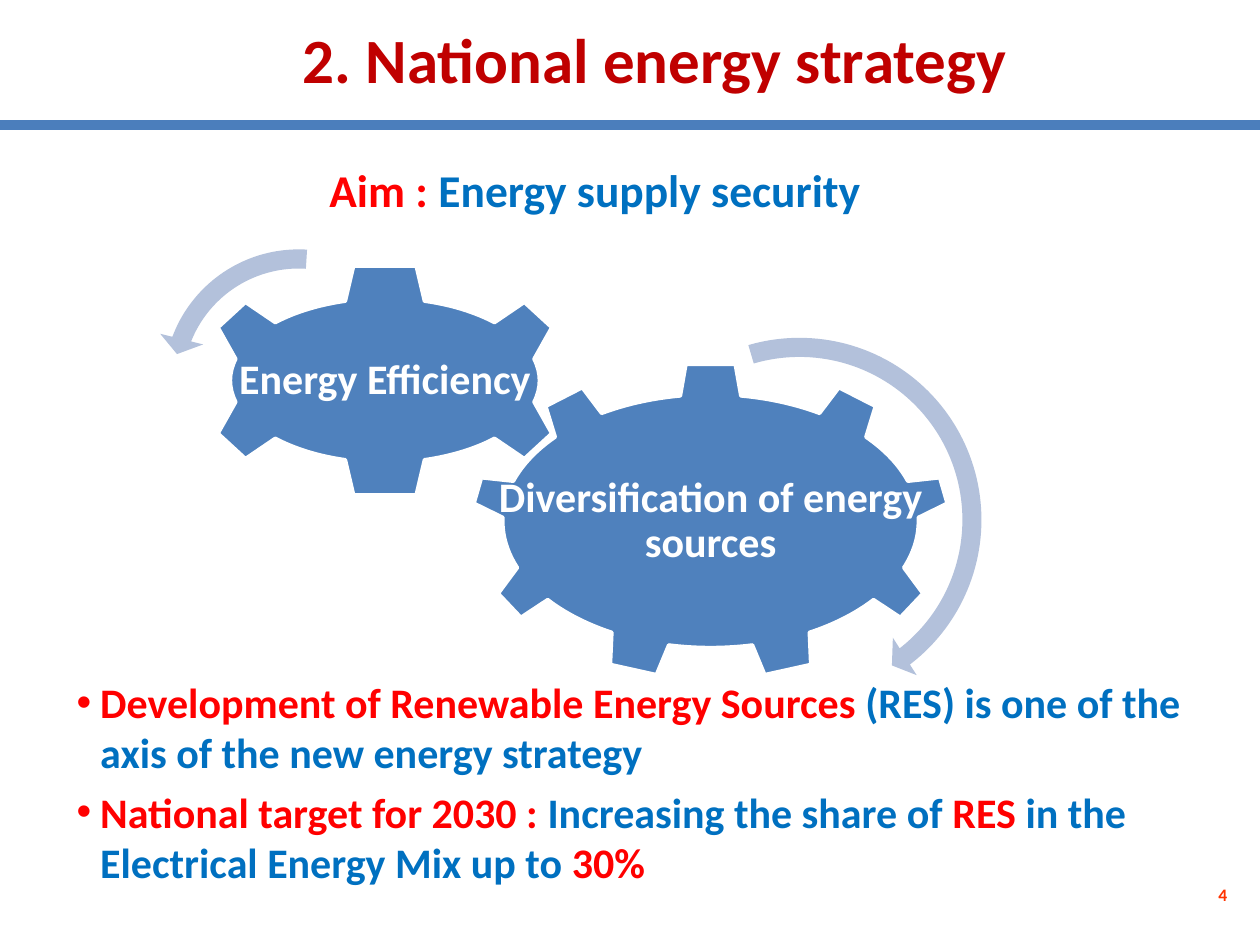
from dataclasses import dataclass

from lxml import etree
from pptx import Presentation
from pptx.dml.color import RGBColor
from pptx.enum.shapes import MSO_CONNECTOR, MSO_SHAPE
from pptx.enum.text import MSO_ANCHOR, PP_ALIGN
from pptx.oxml.ns import qn
from pptx.util import Pt

STRAIGHT = MSO_CONNECTOR.STRAIGHT
GEAR_6, GEAR_9 = MSO_SHAPE.GEAR_6, MSO_SHAPE.GEAR_9
ARC_RIGHT, ARC_LEFT = MSO_SHAPE.CIRCULAR_ARROW, MSO_SHAPE.LEFT_CIRCULAR_ARROW
LEFT, CENTER, RIGHT = PP_ALIGN.LEFT, PP_ALIGN.CENTER, PP_ALIGN.RIGHT
TOP, MIDDLE = MSO_ANCHOR.TOP, MSO_ANCHOR.MIDDLE

TITLE_ONLY = 5
FONT = "Calibri"
WHITE, RED, BLUE, DARK_RED = "FFFFFF", "FF0000", "0070C0", "C00000"
GEAR_BLUE, ARC_BLUE, RULE_BLUE, NUMBER_RED = "4F81BD", "B3C1DB", "4B7EBC", "FF3300"

Box = tuple[float, float, float, float]
Runs = list[tuple[str, str]]


@dataclass
class Gear:
    preset: MSO_SHAPE
    box: Box
    label: str


@dataclass
class Arc:
    preset: MSO_SHAPE
    box: Box
    rotation: float
    adjustments: list[float]


GEARS = [
    Gear(GEAR_9, (269.3, 207.4, 273.6, 180.7), "Diversification of energy sources"),
    Gear(GEAR_6, (111.6, 150.5, 216.7, 133.9), "Energy Efficiency"),
]
ARCS = [
    Arc(ARC_RIGHT, (345.6, 185.8, 222.5, 222.5), 0,
        [0.049, 3.126, 31.419, 152.223, 0.057]),
    Arc(ARC_LEFT, (86.4, 135.4, 168.5, 168.5), 26.3,
        [0.065, 4.3, 104.891, 148.378, 0.075]),
]
STRATEGY_POINTS: list[Runs] = [
    [("Development of Renewable Energy Sources ", RED),
     ("(RES) is one of the axis of the new energy strategy", BLUE)],
    [("National target for 2030 : ", RED), ("Increasing the share of ", BLUE),
     ("RES ", RED), ("in the Electrical Energy Mix up to ", BLUE), ("30%", RED)],
]


def rgb(color: str) -> RGBColor:
    return RGBColor.from_string(color)


def points(box: Box) -> list[Pt]:
    return [Pt(value) for value in box]


def write_runs(paragraph, runs: Runs, size: float, align: PP_ALIGN) -> None:
    paragraph.alignment = align
    for text, color in runs:
        run = paragraph.add_run()
        run.text = text
        run.font.name, run.font.size, run.font.bold = FONT, Pt(size), True
        run.font.color.rgb = rgb(color)


def add_text(slide, box: Box, runs: Runs, size: float, align: PP_ALIGN = CENTER,
             anchor: MSO_ANCHOR = TOP):
    frame = slide.shapes.add_textbox(*points(box)).text_frame
    frame.word_wrap = True
    frame.vertical_anchor = anchor
    write_runs(frame.paragraphs[0], runs, size, align)
    return frame


def add_bullet(slide, box: Box, runs: Runs) -> None:
    paragraph = add_text(slide, box, runs, 24, LEFT).paragraphs[0]
    properties = paragraph._p.get_or_add_pPr()
    properties.set("marL", str(Pt(13.5)))
    properties.set("indent", str(Pt(-13.5)))
    etree.SubElement(properties, qn("a:buFont")).set("typeface", "Arial")
    etree.SubElement(properties, qn("a:buChar")).set("char", "•")


def add_preset(slide, preset: MSO_SHAPE, box: Box, color: str):
    shape = slide.shapes.add_shape(preset, *points(box))
    shape.shadow.inherit = False
    shape.fill.solid()
    shape.fill.fore_color.rgb = rgb(color)
    return shape


def add_gear(slide, gear: Gear) -> None:
    outline = add_preset(slide, gear.preset, gear.box, GEAR_BLUE).line
    outline.color.rgb = rgb(WHITE)
    outline.width = Pt(2)
    frame = add_text(slide, gear.box, [(gear.label, WHITE)], 24, anchor=MIDDLE)
    frame.margin_left = frame.margin_right = Pt(2.4)
    frame.margin_top = frame.margin_bottom = Pt(2.4)
    frame.paragraphs[0].line_spacing = 0.9


def add_arc(slide, arc: Arc) -> None:
    arrow = add_preset(slide, arc.preset, arc.box, ARC_BLUE)
    arrow.line.fill.background()
    arrow.rotation = arc.rotation
    for index, value in enumerate(arc.adjustments):
        arrow.adjustments[index] = value


def main() -> None:
    deck = Presentation()
    deck.slide_width, deck.slide_height = Pt(720), Pt(540)
    slide = deck.slides.add_slide(deck.slide_layouts[TITLE_ONLY])

    # Page number and rule under the title
    add_text(slide, (480.2, 496.8, 228.2, 28.8), [("4", NUMBER_RED)], 10, RIGHT, MIDDLE)
    rule = slide.shapes.add_connector(STRAIGHT, *points((0, 71.3, 720, 71.3)))
    rule.line.color.rgb = rgb(RULE_BLUE)
    rule.line.width = Pt(6)
    etree.SubElement(rule._element.spPr, qn("a:effectLst"))

    # Title and aim
    title = slide.shapes.title
    title.left, title.top, title.width, title.height = points((70.6, 0, 607, 66.2))
    title.text_frame.vertical_anchor = MIDDLE
    write_runs(title.text_frame.paragraphs[0],
               [("2. National energy strategy", DARK_RED)], 36, CENTER)
    add_text(slide, (172.8, 89.3, 334.8, 38.9),
             [("Aim : ", RED), ("Energy supply security", BLUE)], 26)

    # Strategy points
    for row, runs in enumerate(STRATEGY_POINTS):
        add_bullet(slide, (36.7, 383 + row * 62.7, 657.4, 65.5), runs)

    # Gears and their turning arrows
    for gear in GEARS:
        add_gear(slide, gear)
    for arc in ARCS:
        add_arc(slide, arc)

    deck.save("out.pptx")


if __name__ == "__main__":
    main()
